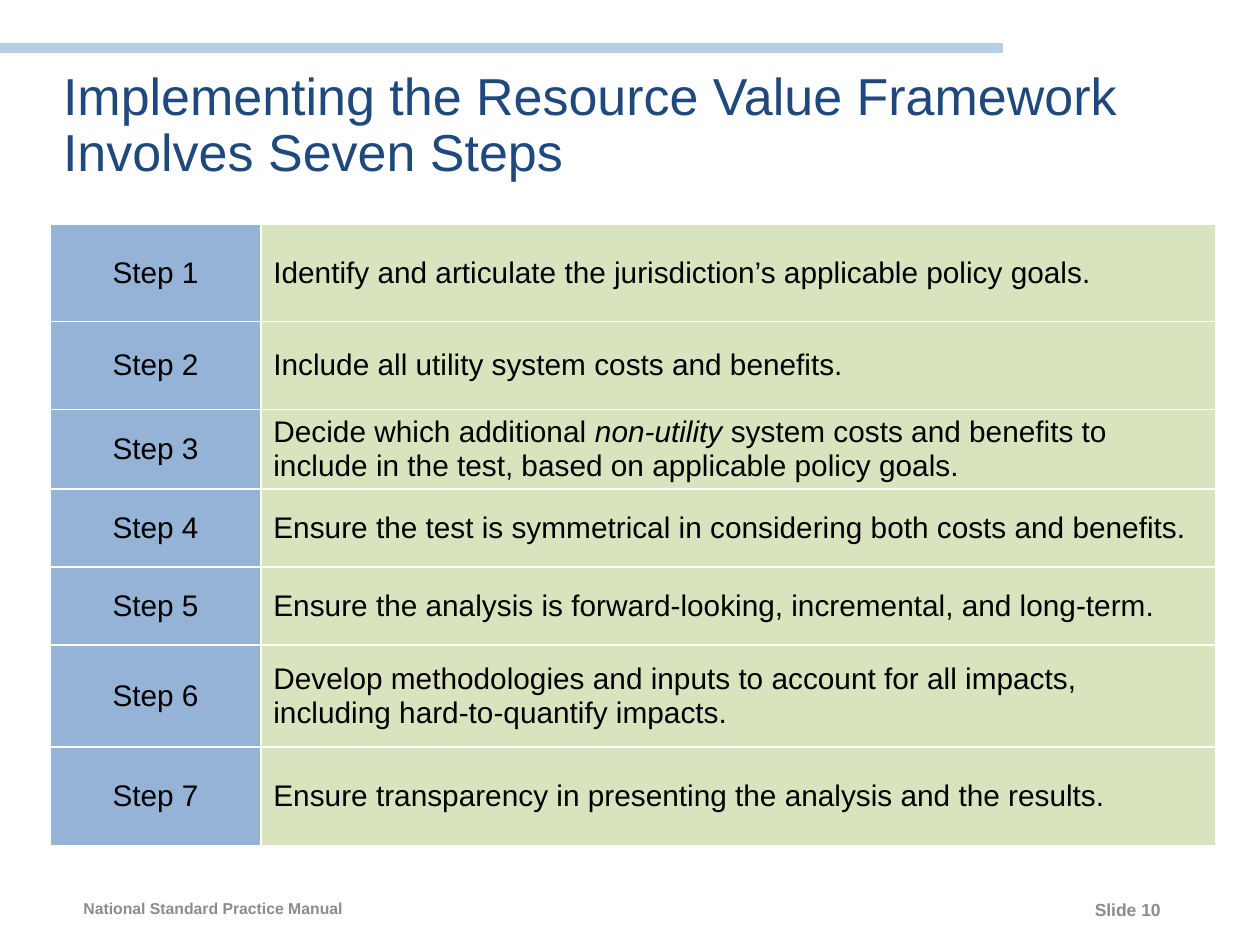
from dataclasses import dataclass

from lxml import etree
from pptx import Presentation
from pptx.dml.color import RGBColor
from pptx.enum.shapes import MSO_CONNECTOR
from pptx.enum.text import MSO_ANCHOR, MSO_AUTO_SIZE, PP_ALIGN
from pptx.oxml.ns import qn
from pptx.util import Inches, Pt

STRAIGHT = MSO_CONNECTOR.STRAIGHT
MIDDLE = MSO_ANCHOR.MIDDLE
NO_AUTOFIT = MSO_AUTO_SIZE.NONE
LEFT, CENTER, RIGHT = PP_ALIGN.LEFT, PP_ALIGN.CENTER, PP_ALIGN.RIGHT

SLIDE_WIDTH, SLIDE_HEIGHT = Inches(10), Inches(7.5)
TITLE_ONLY = 5
FONT = "Arial"
COLORS = {
    "accent": "B9CDE5",
    "title": "1F497D",
    "label": "95B3D7",
    "action": "D7E4BD",
    "text": "000000",
    "footer": "8C8C8C",
}


@dataclass
class Box:
    left: float
    top: float
    width: float
    height: float

    def emu(self) -> tuple:
        return Inches(self.left), Inches(self.top), Inches(self.width), Inches(self.height)


@dataclass
class Step:
    height: float
    action: str
    emphasis: str = ""


@dataclass
class Footer:
    box: Box
    wording: str
    size: float
    align: PP_ALIGN


STEPS = [
    Step(0.77, "Identify and articulate the jurisdiction’s applicable policy goals."),
    Step(0.7, "Include all utility system costs and benefits."),
    Step(
        0.63,
        "Decide which additional non-utility system costs and benefits to "
        "include in the test, based on applicable policy goals.",
        "non-utility",
    ),
    Step(0.62, "Ensure the test is symmetrical in considering both costs and benefits."),
    Step(0.62, "Ensure the analysis is forward-looking, incremental, and long-term."),
    Step(
        0.81,
        "Develop methodologies and inputs to account for all impacts, "
        "including hard-to-quantify impacts.",
    ),
    Step(0.78, "Ensure transparency in presenting the analysis and the results."),
]
COLUMN_WIDTHS = (1.67, 7.58)
TABLE_BOX = Box(0.4, 1.78, sum(COLUMN_WIDTHS), sum(step.height for step in STEPS))
FOOTERS = [
    Footer(Box(0, 7.01, 3.38, 0.4), "National Standard Practice Manual", 9, CENTER),
    Footer(Box(7.06, 7.03, 2.25, 0.38), "Slide 10", 10, RIGHT),
]


def color(role: str) -> RGBColor:
    return RGBColor.from_string(COLORS[role])


def format_runs(paragraph, size: float, role: str, align: PP_ALIGN, bold: bool = False) -> None:
    paragraph.alignment = align
    for run in paragraph.runs:
        run.font.name = FONT
        run.font.size = Pt(size)
        run.font.bold = bold
        run.font.color.rgb = color(role)


def draw_accent(slide) -> None:
    height = Inches(0.38)
    accent = slide.shapes.add_connector(STRAIGHT, Inches(-0.06), height, Inches(7.96), height)
    accent.line.color.rgb = color("accent")
    accent.line.width = Pt(6)
    etree.SubElement(accent._element.spPr, qn("a:effectLst"))


def draw_title(slide, wording: str) -> None:
    title = slide.shapes.title
    title.left, title.top, title.width, title.height = Box(0.4, 0.49, 8.62, 1.03).emu()
    frame = title.text_frame
    frame.text = wording
    frame.word_wrap = True
    frame.auto_size = NO_AUTOFIT
    frame.vertical_anchor = MIDDLE
    heading = frame.paragraphs[0]
    heading.line_spacing = 0.9
    format_runs(heading, 29.7, "title", LEFT)


def fill_cell(cell, wording: str, role: str, align: PP_ALIGN, emphasis: str = "") -> None:
    cell.fill.solid()
    cell.fill.fore_color.rgb = color(role)
    cell.vertical_anchor = MIDDLE
    paragraph = cell.text_frame.paragraphs[0]
    if emphasis:
        before, after = wording.split(emphasis)
        for part in (before, emphasis, after):
            run = paragraph.add_run()
            run.text = part
            run.font.italic = part == emphasis
    else:
        paragraph.text = wording
    format_runs(paragraph, 17, "text", align)


def draw_steps(slide) -> None:
    table = slide.shapes.add_table(len(STEPS), len(COLUMN_WIDTHS), *TABLE_BOX.emu()).table
    table.first_row = False
    table.horz_banding = False
    for column, width in zip(table.columns, COLUMN_WIDTHS):
        column.width = Inches(width)
    for number, step in enumerate(STEPS, start=1):
        row = table.rows[number - 1]
        row.height = Inches(step.height)
        label, action = row.cells
        fill_cell(label, f"Step {number}", "label", CENTER)
        fill_cell(action, step.action, "action", LEFT, step.emphasis)


def draw_footer(slide, footer: Footer) -> None:
    frame = slide.shapes.add_textbox(*footer.box.emu()).text_frame
    frame.text = footer.wording
    frame.word_wrap = True
    frame.vertical_anchor = MIDDLE
    format_runs(frame.paragraphs[0], footer.size, "footer", footer.align, bold=True)


def main() -> None:
    deck = Presentation()
    deck.slide_width, deck.slide_height = SLIDE_WIDTH, SLIDE_HEIGHT
    slide = deck.slides.add_slide(deck.slide_layouts[TITLE_ONLY])
    draw_accent(slide)
    draw_title(slide, "Implementing the Resource Value Framework Involves Seven Steps")
    draw_steps(slide)
    for footer in FOOTERS:
        draw_footer(slide, footer)
    deck.save("out.pptx")


if __name__ == "__main__":
    main()
